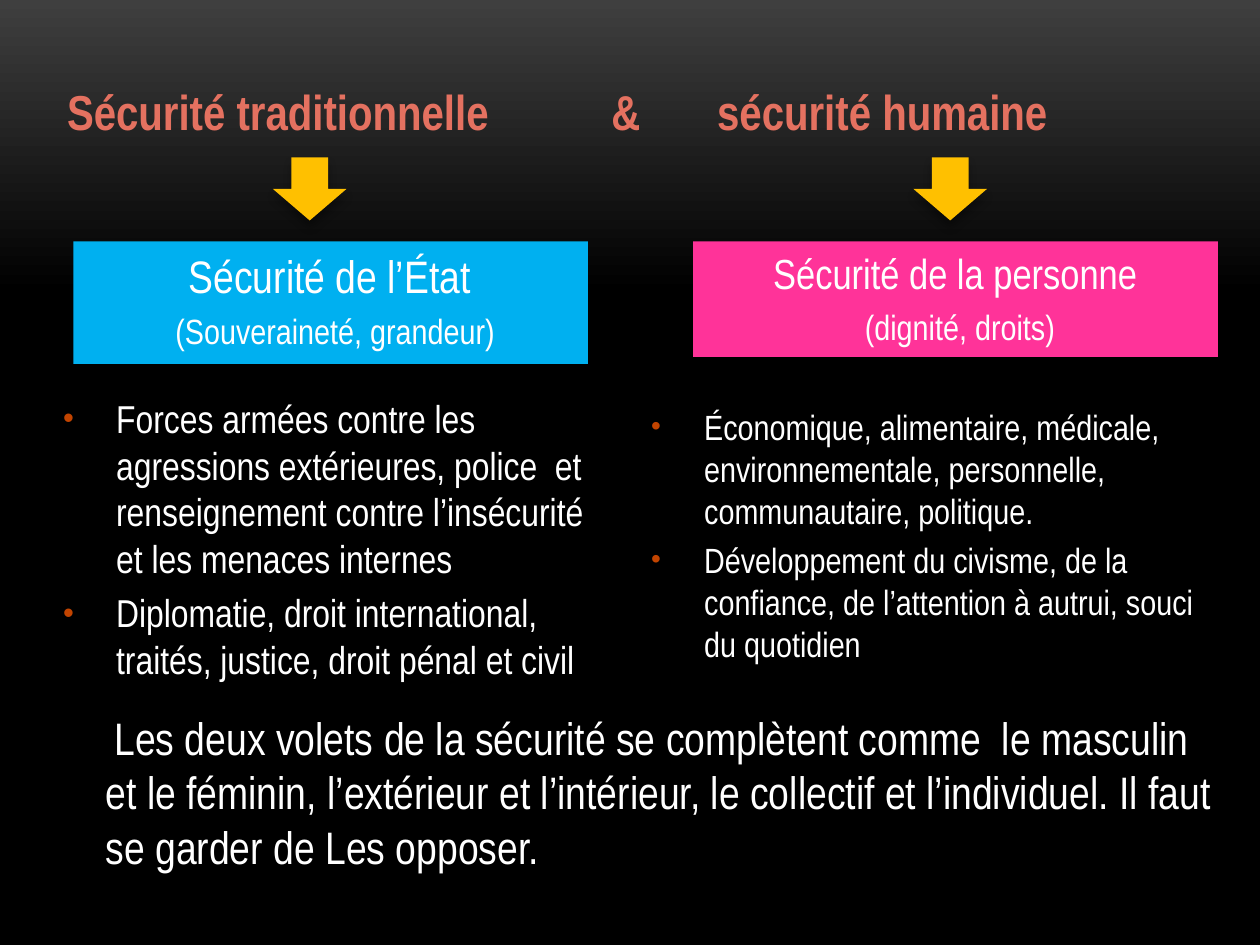
from dataclasses import dataclass
from typing import NamedTuple, Optional

from lxml.etree import SubElement
from pptx import Presentation
from pptx.dml.color import RGBColor as RGB
from pptx.enum.shapes import MSO_SHAPE as Shape
from pptx.enum.text import MSO_ANCHOR as Anchor, PP_ALIGN as Align
from pptx.oxml import parse_xml
from pptx.oxml.ns import nsdecls, qn
from pptx.util import Inches, Pt

COLUMNS, ROWS = 120, 90  # grid cells of 1/12 inch


@dataclass(frozen=True)
class Theme:
    font: str = "Arial Narrow"
    top: str = "3F3F3F"
    bottom: str = "000000"
    text: str = "FFFFFF"
    title: str = "E47160"
    title_outline: str = "862F00"
    state: str = "00B0F0"
    person: str = "FF3399"
    arrow: str = "FFC000"
    bullet: str = "C24400"
    title_size: float = 28
    large_size: float = 26
    person_size: float = 24
    state_list_size: float = 22.2
    small_size: float = 20


THEME = Theme()


class Area(NamedTuple):
    column: float
    row: float
    columns: float
    rows: float


class Line(NamedTuple):
    text: str
    size: float


class Side(NamedTuple):
    arrow: Area
    banner: Area
    color: str
    heading: tuple[Line, Line]
    listing: Area
    points: tuple[Line, Line]


SIDES = (
    Side(
        Area(26, 15, 7, 6), Area(7, 23, 49, 11.67), THEME.state,
        (Line("Sécurité de l’État ", THEME.large_size),
         Line("(Souveraineté, grandeur)", THEME.small_size)),
        Area(4, 37, 56, 31.5),
        (Line("Forces armées contre les agressions extérieures, police  et "
              "renseignement contre l’insécurité et les menaces internes",
              THEME.state_list_size),
         Line("Diplomatie, droit international, traités, justice, "
              "droit pénal et civil", THEME.state_list_size)),
    ),
    Side(
        Area(87, 15, 7, 6), Area(66, 23, 50, 11), THEME.person,
        (Line("Sécurité de la personne ", THEME.person_size),
         Line("(dignité, droits)", THEME.small_size)),
        Area(60, 38, 57, 28),
        (Line("Économique, alimentaire, médicale, environnementale, "
              "personnelle, communautaire, politique.", THEME.small_size),
         Line("Développement du civisme, de la confiance, de l’attention "
              "à autrui, souci du quotidien", THEME.small_size)),
    ),
)
CONCLUSION = Line(
    "Les deux volets de la sécurité se complètent comme  le masculin et le "
    "féminin, l’extérieur et l’intérieur, le collectif et l’individuel. "
    "Il faut se garder de Les opposer.", THEME.large_size)


def place(area: Area) -> list[int]:
    return [Inches(cells / 12) for cells in area]


def add_shape(slide, kind: Shape, area: Area, color: str):
    shape = slide.shapes.add_shape(kind, *place(area))
    shape.shadow.inherit = False
    shape.fill.solid()
    shape.fill.fore_color.rgb = RGB.from_string(color)
    shape.line.fill.background()
    return shape


def add_text_box(slide, area: Area):
    frame = slide.shapes.add_textbox(*place(area)).text_frame
    frame.word_wrap = True
    return frame


def set_font(paragraph, size: float, color: str, bold: bool = False) -> None:
    font = paragraph.font
    font.name, font.size, font.bold = THEME.font, Pt(size), bold
    font.color.rgb = RGB.from_string(color)


def add_bullet(properties) -> None:
    color = SubElement(properties, qn("a:buClr"))
    SubElement(color, qn("a:srgbClr"), val=THEME.bullet)
    SubElement(properties, qn("a:buSzPct"), val="80000")
    SubElement(properties, qn("a:buFont"), typeface="Arial")
    SubElement(properties, qn("a:buChar"), char="•")


def write(frame, lines: tuple[Line, ...], align: Align = Align.LEFT,
          bullets: bool = False, indent: float = -0.42) -> None:
    """Fill a frame with indented paragraphs, spaced by a fifth of their size."""
    frame.vertical_anchor = Anchor.TOP
    for index, line in enumerate(lines):
        paragraph = frame.add_paragraph() if index else frame.paragraphs[0]
        paragraph.text = line.text
        paragraph.alignment = align
        paragraph.space_before = Pt(0.2 * line.size if index else 0)
        properties = paragraph._p.get_or_add_pPr()
        properties.set("marL", str(Inches(0.49)))
        properties.set("indent", str(Inches(indent)))
        if bullets:
            add_bullet(properties)
        set_font(paragraph, line.size, THEME.text)


def paint_background(slide) -> None:
    fill = slide.background.fill
    fill.gradient()
    fill.gradient_angle = 270
    stops = ((0, THEME.top), (0.31, THEME.bottom))
    for stop, (position, color) in zip(fill.gradient_stops, stops):
        stop.position = position
        stop.color.rgb = RGB.from_string(color)


def add_title(slide) -> None:
    frame = add_text_box(slide, Area(5.2, 4, 109.8, 13.2))
    frame.vertical_anchor = Anchor.MIDDLE
    paragraph = frame.paragraphs[0]
    run = paragraph.add_run()
    run.text = "Sécurité traditionnelle\t&\tsécurité humaine"
    outline = parse_xml(
        f'<a:ln {nsdecls("a")} w="{Pt(0.5)}"><a:solidFill>'
        f'<a:srgbClr val="{THEME.title_outline}"/></a:solidFill></a:ln>')
    run._r.get_or_add_rPr().insert(0, outline)
    tabs = SubElement(paragraph._p.get_or_add_pPr(), qn("a:tabLst"))
    for position in (4.32, 5.16):
        SubElement(tabs, qn("a:tab"), pos=str(Inches(position)), algn="l")
    set_font(paragraph, THEME.title_size, THEME.title, bold=True)


def add_arrow(slide, area: Area) -> None:
    arrow = add_shape(slide, Shape.DOWN_ARROW, area, THEME.arrow)
    effects = arrow._element.spPr.find(qn("a:effectLst"))
    effects.append(parse_xml(
        f'<a:outerShdw {nsdecls("a")} blurRad="{Pt(5)}" dist="{Pt(4)}" '
        'dir="5400000" rotWithShape="0"><a:srgbClr val="000000">'
        '<a:alpha val="35000"/></a:srgbClr></a:outerShdw>'))


def add_side(slide, side: Side) -> None:
    banner = add_shape(slide, Shape.RECTANGLE, side.banner, side.color)
    write(banner.text_frame, side.heading, Align.CENTER)
    write(add_text_box(slide, side.listing), side.points, bullets=True)
    add_arrow(slide, side.arrow)


def main() -> None:
    presentation = Presentation()
    presentation.slide_width = Inches(COLUMNS / 12)
    presentation.slide_height = Inches(ROWS / 12)
    slide = presentation.slides.add_slide(presentation.slide_layouts[6])
    paint_background(slide)
    add_title(slide)
    for side in SIDES:
        add_side(slide, side)
    write(add_text_box(slide, Area(3, 67, 114, 20)), (CONCLUSION,), indent=0.07)
    presentation.save("out.pptx")


if __name__ == "__main__":
    main()
